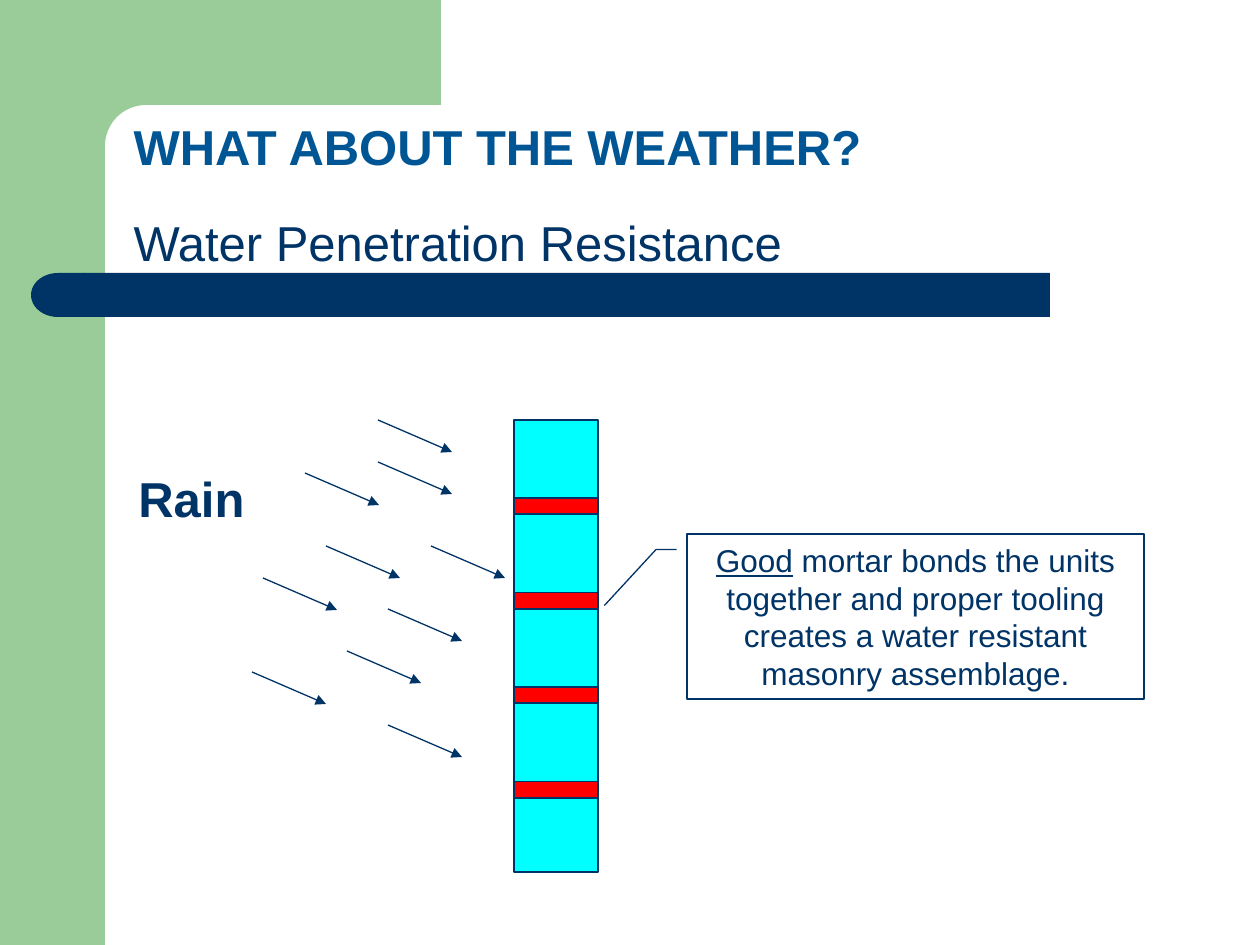
"""Build the slide on water penetration resistance of a masonry wall."""
import math

import lxml.etree
import pptx
import pptx.dml.color
import pptx.enum.shapes
import pptx.enum.text
import pptx.oxml.ns
import pptx.util

SHAPE = pptx.enum.shapes.MSO_SHAPE
ALIGN = pptx.enum.text.PP_ALIGN
ANCHOR = pptx.enum.text.MSO_ANCHOR
COLORS = {"navy": "003366", "blue": "005695", "green": "99CC99",
          "unit": "00FFFF", "mortar": "FF0000"}
FONT = "Arial"

TITLE = [
    [("WHAT ABOUT THE WEATHER?", {"size": 28, "bold": True, "color": "blue"})],
    [("Water Penetration Resistance", {"size": 28, "color": "navy"})],
]
RAIN = [[("Rain", {"size": 28, "bold": True, "color": "navy"})]]
MORTAR_NOTE = [[
    ("Good", {"size": 18, "underline": True, "color": "navy"}),
    (" mortar bonds the units together and proper tooling creates a water "
     "resistant masonry assemblage.", {"size": 18, "color": "navy"}),
]]
NOTE_POINTER = [0.095, -0.023, 0.095, -0.068, 0.434, -0.181]

RAIN_STARTS = [(378, 420), (378, 462), (305, 473), (388, 609), (431, 546),
               (326, 546), (263, 578), (347, 651), (388, 725), (252, 672)]
RAIN_STEP = (74, 32)

WALL_LEFT, WALL_TOP, WALL_WIDTH = 514, 420, 84
UNIT_HEIGHT, LAST_UNIT_HEIGHT = 84, 74
JOINT_OFFSET, JOINT_HEIGHT = 78, 16
JOINTS, JOINTS_SPAN = 4, 378

CORNER_CENTER, CORNER_RADIUS, CORNER_STEPS = 146, 41, 12


def px(length):
    return pptx.util.Emu(round(length * 914400 / 126))


def rgb(name):
    return pptx.dml.color.RGBColor.from_string(COLORS[name])


def paint(shape, fill=None, line=None):
    shape.shadow.inherit = False
    if fill:
        shape.fill.solid()
        shape.fill.fore_color.rgb = rgb(fill)
    else:
        shape.fill.background()
    if line:
        shape.line.color.rgb = rgb(line)
        shape.line.width = pptx.util.Pt(0.75)
    else:
        shape.line.fill.background()
    return shape


def add_block(page, kind, at, fill=None, line=None):
    return paint(page.shapes.add_shape(kind, *map(px, at)), fill, line)


def write(box, paragraphs, align, anchor, spacing=1.0, gap=0):
    frame = box.text_frame
    frame.word_wrap = True
    frame.auto_size = pptx.enum.text.MSO_AUTO_SIZE.NONE
    frame.vertical_anchor = anchor
    for index, spans in enumerate(paragraphs):
        para = frame.add_paragraph() if index else frame.paragraphs[0]
        para.alignment = align
        para.line_spacing = spacing
        para.space_before = pptx.util.Pt(gap if index else 0)
        for text, style in spans:
            span = para.add_run()
            span.text = text
            span.font.name = FONT
            span.font.size = pptx.util.Pt(style["size"])
            span.font.bold = style.get("bold", False)
            span.font.underline = style.get("underline", False)
            span.font.color.rgb = rgb(style["color"])


def add_backdrop(page):
    add_block(page, SHAPE.RECTANGLE, (0, 0, 105, 945), "green")
    angles = [math.pi / 2 * step / CORNER_STEPS for step in range(CORNER_STEPS + 1)]
    arc = [(CORNER_CENTER - CORNER_RADIUS * math.sin(angle),
            CORNER_CENTER - CORNER_RADIUS * math.cos(angle)) for angle in angles]
    outline = [(441, 105), *arc, (105, 161), (63, 161), (63, 0)]
    builder = page.shapes.build_freeform(px(441), px(0))
    builder.add_line_segments([(px(x), px(y)) for x, y in outline], close=True)
    paint(builder.convert_to_shape(), "green")
    add_block(page, SHAPE.RECTANGLE, (84, 273, 966, 44), "navy")
    add_block(page, SHAPE.FLOWCHART_DELAY, (31, 273, 54, 44), "navy").rotation = 180


def add_wall(page):
    pitch = JOINTS_SPAN / JOINTS
    for index in range(JOINTS + 1):
        top = WALL_TOP + index * pitch
        last = index == JOINTS
        height = LAST_UNIT_HEIGHT if last else UNIT_HEIGHT
        add_block(page, SHAPE.RECTANGLE, (WALL_LEFT, top, WALL_WIDTH, height),
                  "unit", "navy")
        if not last:
            add_block(page, SHAPE.RECTANGLE,
                      (WALL_LEFT, top + JOINT_OFFSET, WALL_WIDTH, JOINT_HEIGHT),
                      "mortar", "navy")


def add_raindrop(page, x, y):
    ends = (x, y, x + RAIN_STEP[0], y + RAIN_STEP[1])
    arrow = page.shapes.add_connector(
        pptx.enum.shapes.MSO_CONNECTOR.STRAIGHT, *map(px, ends))
    arrow.line.color.rgb = rgb("navy")
    arrow.line.width = pptx.util.Pt(0.75)
    qn = pptx.oxml.ns.qn
    lxml.etree.SubElement(arrow.line._get_or_add_ln(), qn("a:tailEnd"), type="triangle")
    lxml.etree.SubElement(arrow._element.spPr, qn("a:effectLst"))


def main():
    deck = pptx.Presentation()
    deck.slide_width, deck.slide_height = px(1260), px(945)
    page = deck.slides.add_slide(deck.slide_layouts[5])
    add_backdrop(page)

    title = page.shapes.title
    title.left, title.top, title.width, title.height = map(px, (121, 100, 1071, 179))
    write(title, TITLE, ALIGN.LEFT, ANCHOR.MIDDLE, spacing=1.15, gap=16)

    add_wall(page)
    for x, y in RAIN_STARTS:
        add_raindrop(page, x, y)
    label = page.shapes.add_textbox(*map(px, (126, 462, 158, 72)))
    write(label, RAIN, ALIGN.LEFT, ANCHOR.TOP)

    note = add_block(page, SHAPE.LINE_CALLOUT_2, (687, 534, 457, 165), line="navy")
    for index, value in enumerate(NOTE_POINTER):
        note.adjustments[index] = value
    write(note, MORTAR_NOTE, ALIGN.CENTER, ANCHOR.MIDDLE)

    deck.save("out.pptx")


if __name__ == "__main__":
    main()
